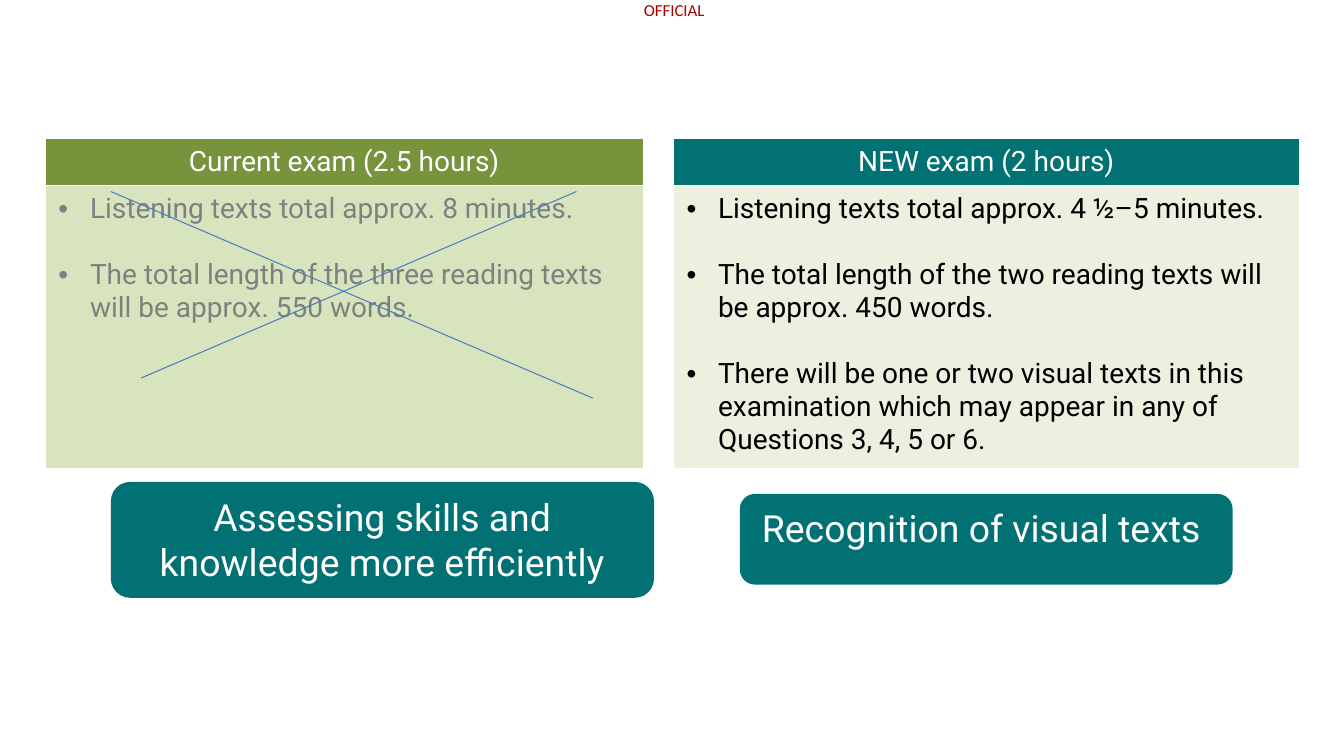
from lxml.etree import SubElement
from pptx import Presentation
from pptx.dml.color import RGBColor
from pptx.enum.shapes import MSO_CONNECTOR as Connector, MSO_SHAPE as Shape
from pptx.enum.text import MSO_ANCHOR as Anchor, PP_ALIGN as Align
from pptx.oxml.ns import qn
from pptx.util import Pt

WHITE = RGBColor(0xFF, 0xFF, 0xFF)
BLACK = RGBColor(0, 0, 0)
GREY = RGBColor(0x80, 0x80, 0x80)
RED = RGBColor(0xA8, 0, 0)
TEAL = RGBColor(0x01, 0x71, 0x74)
GREEN = RGBColor(0x77, 0x93, 0x3C)
LIGHT_GREEN = RGBColor(0xD7, 0xE4, 0xBD)
PALE_GREEN = RGBColor(0xEB, 0xF1, 0xDE)
BLUE = RGBColor(0x4B, 0x7E, 0xBC)

SIDE_INSET = Pt(9.4)
END_INSET = Pt(5)
BULLET_INDENT = Pt(22.5)
BULLET_GAP = Pt(23.5)

EXAMS = [
    (0, "Current exam (2.5 hours)", GREEN, LIGHT_GREEN, GREY, [
        "Listening texts total approx. 8 minutes.",
        "The total length of the three reading texts will be approx. 550 words.",
    ]),
    (2, "NEW exam (2 hours)", TEAL, PALE_GREEN, BLACK, [
        "Listening texts total approx. 4 ½–5 minutes.",
        "The total length of the two reading texts will be approx. 450 words.",
        "There will be one or two visual texts in this examination "
        "which may appear in any of Questions 3, 4, 5 or 6.",
    ]),
]


def set_font(paragraph, size, color, name="Roboto"):
    paragraph.font.name = name
    paragraph.font.size = Pt(size)
    paragraph.font.bold = False
    paragraph.font.color.rgb = color


def set_margins(holder, side=SIDE_INSET, end=END_INSET):
    holder.margin_left = holder.margin_right = side
    holder.margin_top = holder.margin_bottom = end


def fill_cell(cell, color):
    cell.fill.solid()
    cell.fill.fore_color.rgb = color
    set_margins(cell)


def add_bullet(paragraph):
    properties = paragraph._p.get_or_add_pPr()
    properties.set("marL", str(BULLET_INDENT))
    properties.set("indent", str(-BULLET_INDENT))
    SubElement(properties, qn("a:buFont"), typeface="Arial")
    SubElement(properties, qn("a:buChar"), char="•")


def write_header(cell, text, color):
    fill_cell(cell, color)
    cell.vertical_anchor = Anchor.MIDDLE
    paragraph = cell.text_frame.paragraphs[0]
    paragraph.text = text
    paragraph.alignment = Align.CENTER
    set_font(paragraph, 20, WHITE)


def write_bullets(cell, items, fill, color):
    fill_cell(cell, fill)
    frame = cell.text_frame
    for index, item in enumerate(items):
        paragraph = frame.add_paragraph() if index else frame.paragraphs[0]
        paragraph.text = item
        add_bullet(paragraph)
        if index:
            paragraph.space_before = BULLET_GAP
        set_font(paragraph, 20, color)


def add_comparison(slide):
    frame = slide.shapes.add_table(2, 3, Pt(32.4), Pt(98.6), Pt(895.7), Pt(235.4))
    table = frame.table
    table.horz_banding = False
    for column, width in zip(table.columns, (427, 21.6, 447.1)):
        column.width = Pt(width)
    for row, height in zip(table.rows, (33.4, 202)):
        row.height = Pt(height)
        row.cells[1].fill.background()
    for column, heading, header_fill, body_fill, color, items in EXAMS:
        write_header(table.cell(0, column), heading, header_fill)
        write_bullets(table.cell(1, column), items, body_fill, color)


def add_line(slide, *ends):
    line = slide.shapes.add_connector(Connector.STRAIGHT, *map(Pt, ends))
    line.line.color.rgb = BLUE
    line.line.width = Pt(0.75)
    SubElement(line._element.spPr, qn("a:effectLst"))


def add_callout(slide, text, *bounds):
    shape = slide.shapes.add_shape(Shape.ROUNDED_RECTANGLE, *map(Pt, bounds))
    shape.shadow.inherit = False
    shape.fill.solid()
    shape.fill.fore_color.rgb = TEAL
    shape.line.fill.background()
    frame = shape.text_frame
    frame.word_wrap = True
    frame.vertical_anchor = Anchor.TOP
    set_margins(frame)
    paragraph = frame.paragraphs[0]
    paragraph.text = text
    paragraph.alignment = Align.CENTER
    set_font(paragraph, 26.7, WHITE)


def add_marking(slide, text):
    frame = slide.shapes.add_textbox(Pt(458.6), 0, Pt(46), Pt(14.4)).text_frame
    frame.word_wrap = False
    set_margins(frame, 0, 0)
    paragraph = frame.paragraphs[0]
    paragraph.text = text
    paragraph.alignment = Align.CENTER
    set_font(paragraph, 12, RED, "Calibri")


def main():
    presentation = Presentation()
    presentation.slide_width = Pt(960)
    presentation.slide_height = Pt(540)
    slide = presentation.slides.add_slide(presentation.slide_layouts[6])
    add_marking(slide, "OFFICIAL")
    add_comparison(slide)
    add_line(slide, 100.8, 270, 411.8, 136.8)
    add_line(slide, 79.2, 136.8, 423.4, 284.4)
    add_callout(slide, "Assessing skills and knowledge more efficiently",
                79.2, 344.2, 388, 82.8)
    add_callout(slide, "Recognition of visual texts ", 528.5, 352.8, 352, 64.8)
    presentation.save("out.pptx")


if __name__ == "__main__":
    main()
